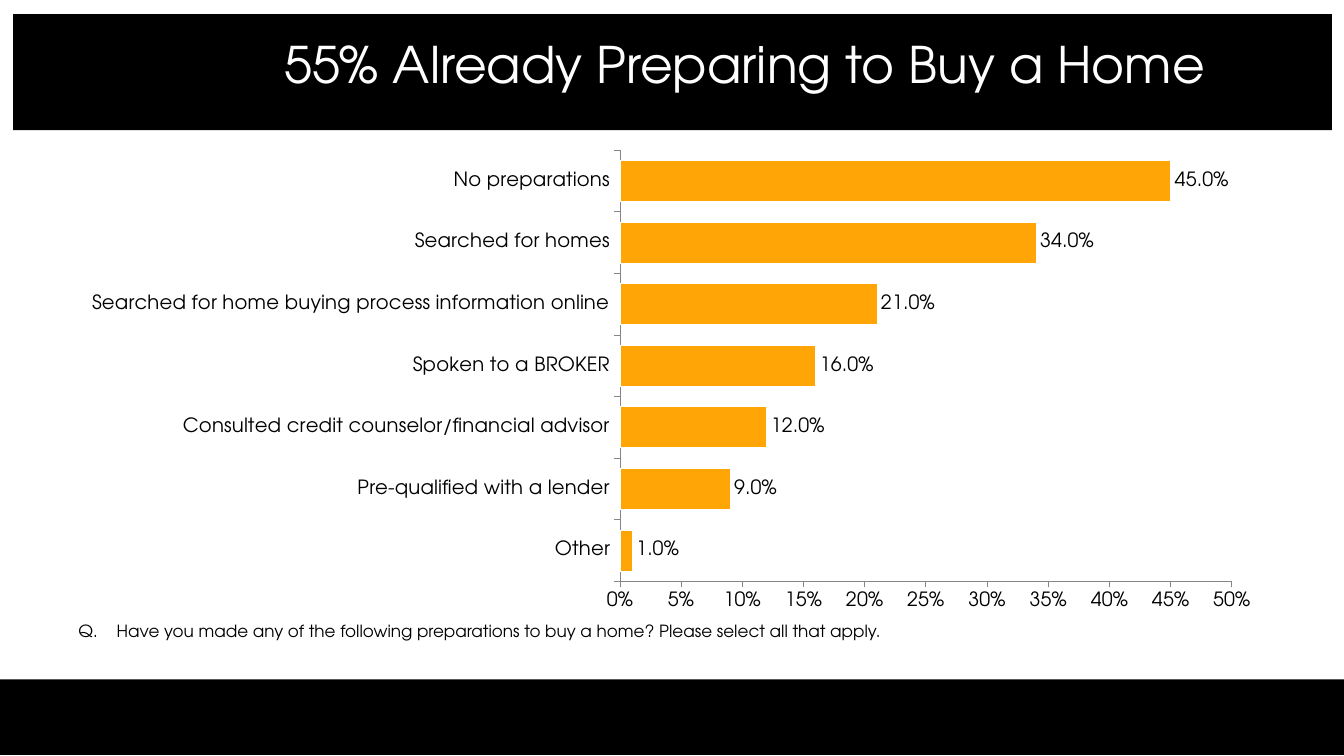
from lxml import etree
from pptx import Presentation
from pptx.chart.data import CategoryChartData
from pptx.dml.color import RGBColor
from pptx.enum.chart import XL_CHART_TYPE, XL_LABEL_POSITION, XL_TICK_MARK
from pptx.enum.shapes import MSO_SHAPE
from pptx.enum.text import MSO_ANCHOR, PP_ALIGN
from pptx.oxml.ns import qn
from pptx.util import Inches, Pt

BAR_CLUSTERED = XL_CHART_TYPE.BAR_CLUSTERED
OUTSIDE_END = XL_LABEL_POSITION.OUTSIDE_END
TICK_OUT, TICK_NONE = XL_TICK_MARK.OUTSIDE, XL_TICK_MARK.NONE
RECTANGLE = MSO_SHAPE.RECTANGLE
MIDDLE, TOP = MSO_ANCHOR.MIDDLE, MSO_ANCHOR.TOP
CENTER, LEFT = PP_ALIGN.CENTER, PP_ALIGN.LEFT

# Content
TITLE = "55% Already Preparing to Buy a Home"
QUESTION = ("Have you made any of the following preparations to buy a home? "
            "Please select all that apply.")
PREPARATIONS = [  # bottom bar first
    ("Other", 0.01),
    ("Pre-qualified with a lender", 0.09),
    ("Consulted credit counselor/financial advisor", 0.12),
    ("Spoken to a BROKER", 0.16),
    ("Searched for home buying process information online", 0.21),
    ("Searched for homes", 0.34),
    ("No preparations", 0.45),
]
FONT = "TeX Gyre Adventor"
COLORS = {"band": "000000", "title": "FFFFFF", "text": "000000",
          "bar": "FFA505", "bar_edge": "FFFFFF", "axis": "868686"}

# Left, top, width, height in inches
BANDS = [(0, 6.74, 13.33, 0.75), (0.13, 0.14, 13.08, 1.15)]
TITLE_BOX = (1.7, 0.33, 11.37, 0.67)
CHART_BOX = (0.68, 1.4, 11.98, 4.76)
PLOT_BOX = (6.15, 1.49, 6.07, 4.28)
QUESTION_BOX = (0.68, 6.11, 8.83, 0.3)
QUESTION_INDENT = 0.38

prs = Presentation()
prs.slide_width, prs.slide_height = Inches(13.33), Inches(7.5)
slide = prs.slides.add_slide(prs.slide_layouts[6])


def color(name):
    return RGBColor.from_string(COLORS[name])


def inches(box):
    return [Inches(length) for length in box]


def style_font(font, size, color_name):
    font.name, font.size, font.bold = FONT, Pt(size), False
    font.color.rgb = color(color_name)


def add_text(text, box, size, color_name, align=LEFT, anchor=TOP,
             spacing=None, letter_start=None):
    frame = slide.shapes.add_textbox(*inches(box)).text_frame
    frame.word_wrap = True
    frame.vertical_anchor = anchor
    paragraph = frame.paragraphs[0]
    paragraph.alignment = align
    paragraph.line_spacing = spacing
    if letter_start:
        props = paragraph._p.get_or_add_pPr()
        props.set("marL", str(Inches(QUESTION_INDENT)))
        props.set("indent", str(-Inches(QUESTION_INDENT)))
        etree.SubElement(props, qn("a:buFont"), typeface="+mj-lt")
        etree.SubElement(props, qn("a:buAutoNum"), type="alphaUcPeriod",
                         startAt=str(letter_start))
    run = paragraph.add_run()
    run.text = text
    style_font(run.font, size, color_name)


# Black bands
for band_box in BANDS:
    band = slide.shapes.add_shape(RECTANGLE, *inches(band_box))
    band.shadow.inherit = False
    band.fill.solid()
    band.fill.fore_color.rgb = color("band")
    band.line.fill.background()

add_text(TITLE, TITLE_BOX, 36, "title", align=CENTER, anchor=MIDDLE, spacing=0.9)

# Bar chart
survey = CategoryChartData(number_format="0.0%")
survey.categories = [name for name, share in PREPARATIONS]
survey.add_series("Series 1", [share for name, share in PREPARATIONS])
chart = slide.shapes.add_chart(BAR_CLUSTERED, *inches(CHART_BOX), survey).chart
chart.has_legend = chart.has_title = False
style_font(chart.font, 14, "text")

bars = chart.plots[0]
bars.gap_width = 50
bars.vary_by_categories = False
bar_format = bars.series[0].format
bar_format.fill.solid()
bar_format.fill.fore_color.rgb = color("bar")
bar_format.line.color.rgb = color("bar_edge")

bars.has_data_labels = True
labels = bars.data_labels
labels.show_value = True
labels.number_format, labels.number_format_is_linked = "0.0%", False
labels.position = OUTSIDE_END
style_font(labels.font, 14, "text")

for axis in (chart.category_axis, chart.value_axis):
    axis.has_major_gridlines = False
    axis.major_tick_mark, axis.minor_tick_mark = TICK_OUT, TICK_NONE
    axis.format.line.color.rgb = color("axis")
    style_font(axis.tick_labels.font, 14, "text")
shares = chart.value_axis
shares.minimum_scale, shares.maximum_scale, shares.major_unit = 0, 0.5, 0.05
shares.tick_labels.number_format = "0%"
shares.tick_labels.number_format_is_linked = False

# Fixed plot area, as fractions of the chart
plot_area = chart._chartSpace.chart.plotArea
for old_layout in plot_area.findall(qn("c:layout")):
    plot_area.remove(old_layout)
layout = etree.Element(qn("c:layout"))
plot_area.insert(0, layout)
manual = etree.SubElement(layout, qn("c:manualLayout"))
left, top, width, height = CHART_BOX
plot_left, plot_top, plot_width, plot_height = PLOT_BOX
for tag, value in [("layoutTarget", "inner"), ("xMode", "edge"), ("yMode", "edge"),
                   ("x", (plot_left - left) / width), ("y", (plot_top - top) / height),
                   ("w", plot_width / width), ("h", plot_height / height)]:
    etree.SubElement(manual, qn("c:" + tag), val=str(value))

# Survey question, lettered Q
add_text(QUESTION, QUESTION_BOX, 12, "text", letter_start=17)

prs.save("out.pptx")
